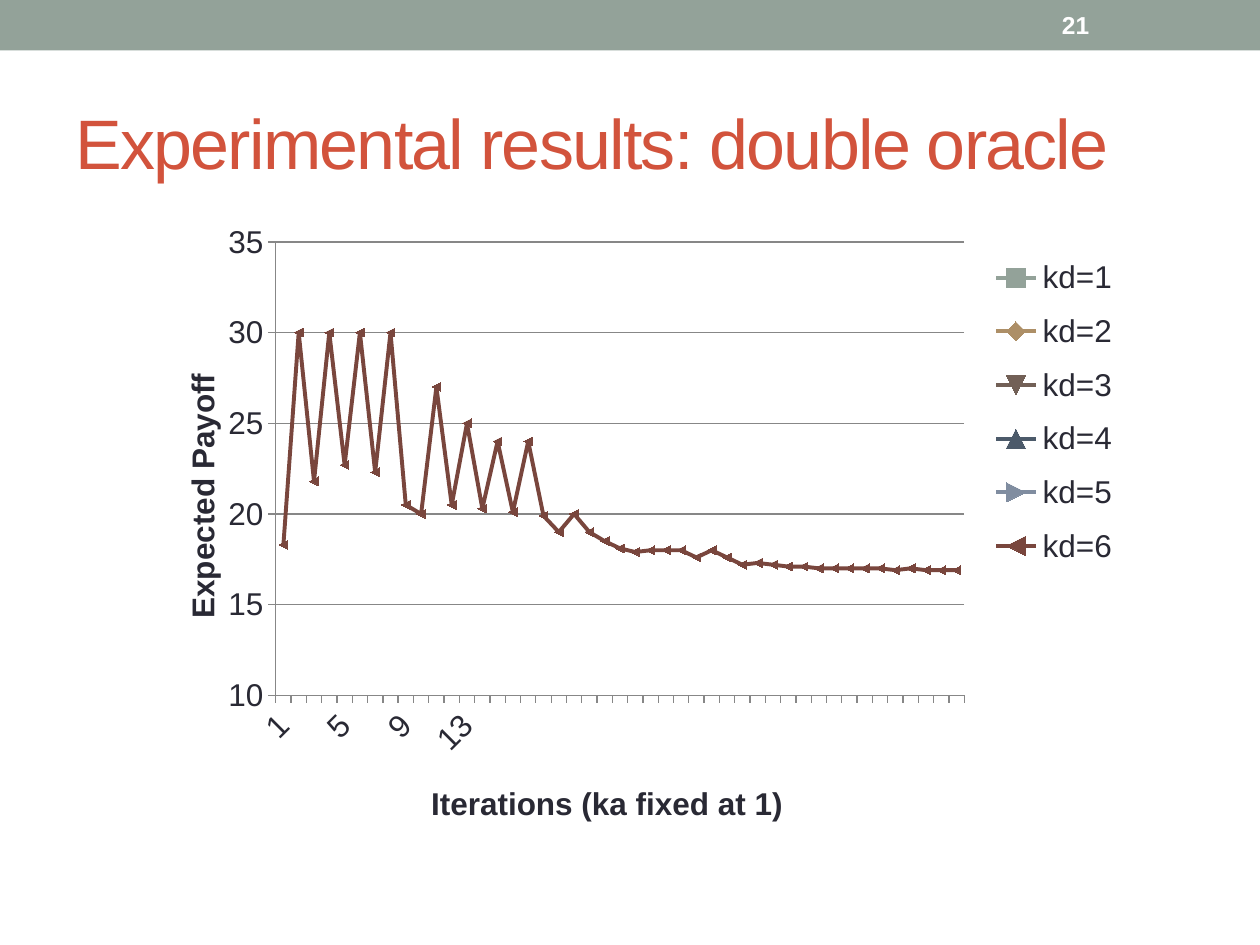
from dataclasses import dataclass

from lxml.etree import SubElement
from pptx import Presentation
from pptx.chart.data import CategoryChartData
from pptx.dml.color import RGBColor
from pptx.enum.chart import XL_CHART_TYPE as ChartType
from pptx.enum.chart import XL_LEGEND_POSITION as LegendPos
from pptx.enum.chart import XL_TICK_MARK as TickMark
from pptx.enum.shapes import MSO_SHAPE as Shape
from pptx.enum.text import MSO_ANCHOR as Anchor
from pptx.oxml import parse_xml
from pptx.oxml.ns import nsdecls, qn
from pptx.util import Inches, Pt

FONT = "Arial"
BAND = RGBColor(0x93, 0xA2, 0x99)
RED = RGBColor(0xD2, 0x53, 0x3C)
INK = RGBColor(0x29, 0x29, 0x34)
GREY = RGBColor(0x87, 0x87, 0x87)
WHITE = RGBColor(0xFF, 0xFF, 0xFF)


@dataclass
class Label:
    text: str
    box: tuple  # left, top, width, height in inches
    size: int
    color: RGBColor
    bold: bool = False
    spacing: int = 0  # hundredths of a point


@dataclass
class Line:
    name: str
    color: RGBColor
    payoffs: list


LABELS = [
    Label("Experimental results: double oracle", (0.5, 0.58, 9, 1.08), 40, RED,
          spacing=-100),
    Label("21", (8.33, 0.02, 1.17, 0.36), 14, WHITE, bold=True),
]

LINES = [
    Line("kd=1", BAND,
         [21.6, 30, 25.1, 30, 26.6, 30, 27.3, 30, 27.8, 30, 28.2, 30, 28.4, 28.4]),
    Line("kd=2", RGBColor(0xAD, 0x8F, 0x67),
         [21.6, 30, 18.3, 30, 21.8, 30, 23.5, 30, 23.5, 30, 25, 25.4, 27, 25, 25,
          24.8, 24.7, 24.7]),
    Line("kd=3", RGBColor(0x72, 0x60, 0x56),
         [21.6, 30, 18.3, 30, 21.8, 30, 22.7, 30, 22.3, 30, 24, 23.3, 27, 23.2, 25,
          22.9, 24, 22.5, 24, 22.7, 22.2, 22.2, 22.2, 22.1, 22.1]),
    Line("kd=4", RGBColor(0x4C, 0x5A, 0x6A),
         [18.3, 30, 21.8, 30, 22.7, 30, 22.3, 30, 22.3, 27, 23.3, 25, 21.8, 24, 21.6,
          24, 21.4, 21, 21, 20.2, 20.2, 20.2, 20.1, 19.9, 19.9, 20, 19.9, 19.9, 19.9]),
    Line("kd=5", RGBColor(0x80, 0x8D, 0xA0),
         [18.3, 30, 21.8, 30, 22.7, 22.3, 30, 20.5, 20, 27, 20.5, 25, 20.3, 24, 20.1,
          24, 20.3, 18.5, 19, 20, 19.1, 18.6, 18.4, 18.2, 18.2, 18.1, 18, 18, 17.9, 18,
          17.9, 18, 17.9, 18, 17.9, 18, 18, 17.9, 17.9]),
    Line("kd=6", RGBColor(0x79, 0x46, 0x3D),
         [18.3, 30, 21.8, 30, 22.7, 30, 22.3, 30, 20.5, 20, 27, 20.5, 25, 20.3, 24,
          20.1, 24, 19.9, 19, 20, 19, 18.5, 18.1, 17.9, 18, 18, 18, 17.6, 18, 17.6,
          17.2, 17.3, 17.2, 17.1, 17.1, 17, 17, 17, 17, 17, 16.9, 17, 16.9, 16.9, 16.9]),
]


def style_font(font, size: int, color: RGBColor, bold: bool = False) -> None:
    font.name, font.size, font.bold = FONT, Pt(size), bold
    font.color.rgb = color


def add_label(slide, label: Label) -> None:
    tf = slide.shapes.add_textbox(*map(Inches, label.box)).text_frame
    tf.word_wrap = True
    tf.vertical_anchor = Anchor.MIDDLE
    r = tf.paragraphs[0].add_run()
    r.text = label.text
    style_font(r.font, label.size, label.color, label.bold)
    if label.spacing:
        r.font._element.set("spc", str(label.spacing))


def place(part, index: int, **shares: float) -> None:
    """Fix a chart part at shares (x, y, w, h) of the chart's size."""
    for old in part.findall(qn("c:layout")):
        part.remove(old)
    layout = parse_xml(f"<c:layout {nsdecls('c')}><c:manualLayout/></c:layout>")
    manual = layout[0]
    if part.tag == qn("c:plotArea"):
        SubElement(manual, qn("c:layoutTarget")).set("val", "inner")
    for side in "xy":
        SubElement(manual, qn(f"c:{side}Mode")).set("val", "edge")
    for key, share in shares.items():
        SubElement(manual, qn(f"c:{key}")).set("val", str(share))
    part.insert(index, layout)


def style_axis(axis, title: str, x: float, y: float) -> None:
    axis.major_tick_mark = TickMark.OUTSIDE
    axis.minor_tick_mark = TickMark.NONE
    axis.format.line.color.rgb = GREY
    style_font(axis.tick_labels.font, 18, INK)
    r = axis.axis_title.text_frame.paragraphs[0].add_run()
    r.text = title
    style_font(r.font, 18, INK, bold=True)
    place(axis.axis_title._element, 1, x=x, y=y)


def add_payoff_chart(slide) -> None:
    data = CategoryChartData()
    data.categories = [str(n) for n in range(1, 15)]
    for line in LINES:
        data.add_series(line.name, line.payoffs)
    box = map(Inches, (1.08, 1.67, 7.92, 5))
    chart = slide.shapes.add_chart(ChartType.LINE_MARKERS, *box, data).chart
    chart.has_title = False
    style_font(chart.font, 10, INK)
    place(chart._chartSpace.chart.plotArea, 0, x=0.14, y=0.05, w=0.69, h=0.72)

    # Axes
    cat, val = chart.category_axis, chart.value_axis
    style_axis(cat, "Iterations (ka fixed at 1)", 0.29, 0.9)
    style_axis(val, "Expected Payoff", 0.04, 0.25)
    cat._element.find(qn("c:txPr")).find(qn("a:bodyPr")).set("rot", "-2700000")
    val.minimum_scale, val.maximum_scale, val.major_unit = 10, 35, 5
    val.has_major_gridlines = True
    val.major_gridlines.format.line.color.rgb = GREY

    # Legend
    chart.has_legend = True
    chart.legend.position = LegendPos.RIGHT
    chart.legend.include_in_layout = False
    style_font(chart.legend.font, 18, INK)
    place(chart.legend._element, 1, x=0.85, y=0.05, w=0.14, h=0.54)

    # Lines
    chart.plots[0].vary_by_categories = False
    for series, line in zip(chart.plots[0].series, LINES):
        series.smooth = False
        series.format.line.width = Pt(2.25)
        series.format.line.color.rgb = line.color
        series.marker.size = 5
        for part in (series.marker.format.fill, series.marker.format.line.fill):
            part.solid()
            part.fore_color.rgb = line.color


def main() -> None:
    prs = Presentation()
    prs.slide_width, prs.slide_height = Inches(10), Inches(7.5)
    slide = prs.slides.add_slide(prs.slide_layouts[6])

    # Top band
    band = slide.shapes.add_shape(Shape.RECTANGLE, 0, 0, prs.slide_width, Inches(0.4))
    band.shadow.inherit = False
    band.fill.solid()
    band.fill.fore_color.rgb = BAND
    band.line.fill.background()

    for label in LABELS:
        add_label(slide, label)
    add_payoff_chart(slide)
    prs.save("out.pptx")


if __name__ == "__main__":
    main()
